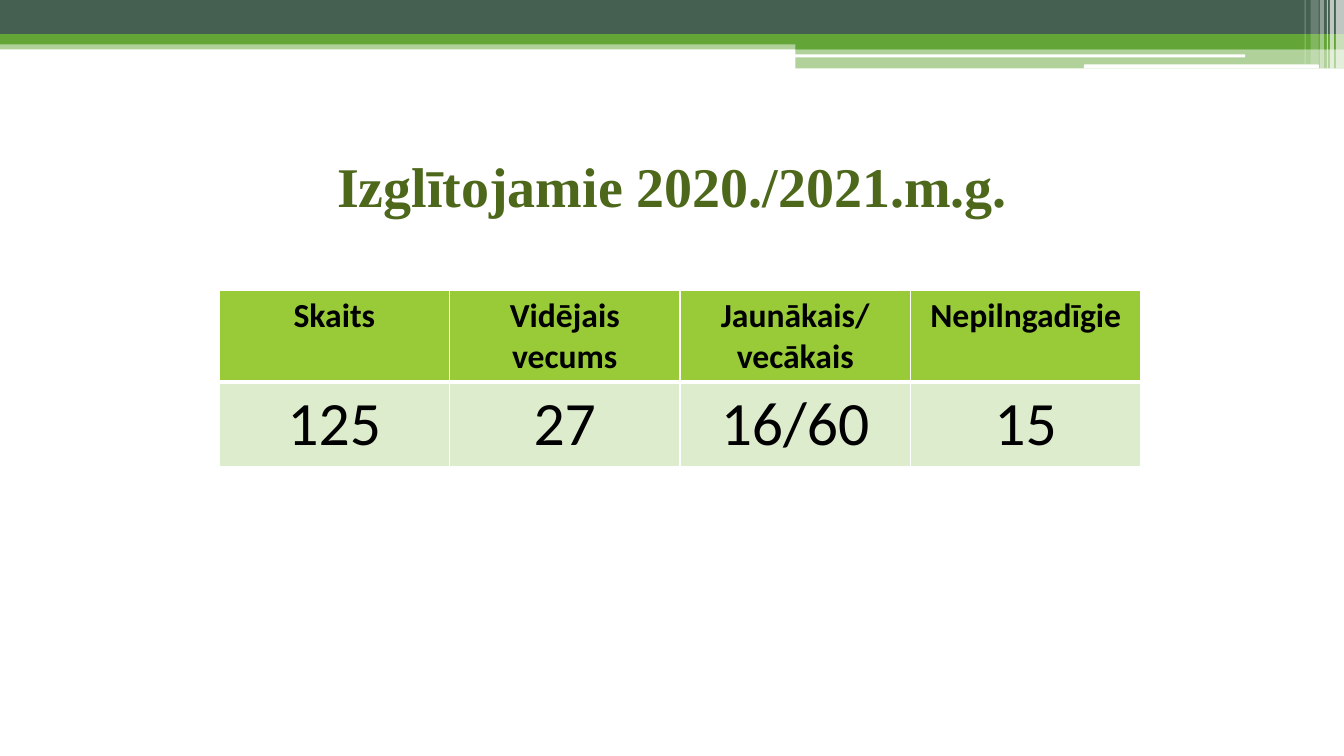
from lxml import etree
from pptx import Presentation
from pptx.dml.color import RGBColor
from pptx.enum.shapes import MSO_SHAPE
from pptx.enum.text import MSO_ANCHOR, PP_ALIGN
from pptx.oxml.ns import qn
from pptx.util import Inches, Pt

RECT, ROUND = MSO_SHAPE.RECTANGLE, MSO_SHAPE.ROUNDED_RECTANGLE
MIDDLE, CENTER = MSO_ANCHOR.MIDDLE, PP_ALIGN.CENTER

SLATE = RGBColor(0x45, 0x5F, 0x51)
GREEN = RGBColor(0x63, 0xA5, 0x37)
OLIVE = RGBColor(0x4D, 0x67, 0x1B)
LIME = RGBColor(0x99, 0xCB, 0x38)
PALE = RGBColor(0xDE, 0xEC, 0xCE)
WHITE = RGBColor(0xFF, 0xFF, 0xFF)
BLACK = RGBColor(0, 0, 0)

W, H = Inches(13.33), Inches(7.5)

BARS = [
    (RECT, 0, 58.8, 100, 13.2, GREEN, 50),
    (RECT, 0, 0, 100, 50, SLATE, 100),
    (RECT, 0, 50, 100, 14.7, GREEN, 100),
    (RECT, 59.19, 57.4, 40.81, 14.7, GREEN, 100),
    (RECT, 59.19, 70.6, 40.81, 29.4, GREEN, 50),
    (ROUND, 59.11, 79.4, 33.53, 4.4, WHITE, 100),
    (ROUND, 80.65, 94.1, 17.48, 5.9, WHITE, 100),
    (RECT, 99.4, 0, 0.6, 100, WHITE, 65),
    (RECT, 98.95, 0, 0.3, 100, WHITE, 65),
    (RECT, 98.72, 0, 0.08, 100, WHITE, 60),
    (RECT, 98.2, 0, 0.3, 100, WHITE, 40),
    (RECT, 97.52, 0, 0.6, 94.1, WHITE, 20),
    (RECT, 97.07, 0, 0.08, 94.1, WHITE, 30),
]

TITLE_FONT = {"name": "Times New Roman", "size": Pt(40), "bold": True}
HEAD_FONT = {"name": "Calibri", "size": Pt(24), "bold": True}
VALUE_FONT = {"name": "Calibri", "size": Pt(44), "bold": False}

ROWS = [
    (["Skaits", "Vidējais vecums", "Jaunākais/\nvecākais", "Nepilngadīgie"],
     HEAD_FONT, LIME, 0.52, {"L": 1, "R": 1, "T": 1, "B": 3}),
    (["125", "27", "16/60", "15"],
     VALUE_FONT, PALE, 0.48, {"L": 1, "R": 1, "T": 3, "B": 1}),
]


def share_box(x, y, w, h):
    return int(W * x), int(H * y), int(W * w), int(H * h)


def write(tf, text, font, color):
    tf.text = text
    for p in tf.paragraphs:
        p.alignment = CENTER
        for r in p.runs:
            for key, value in font.items():
                setattr(r.font, key, value)
            r.font.color.rgb = color


def set_borders(cell, widths):
    tcPr = cell._tc.get_or_add_tcPr()
    for side, points in widths.items():
        ln = etree.SubElement(tcPr, qn(f"a:ln{side}"), w=str(Pt(points)))
        fill = etree.SubElement(ln, qn("a:solidFill"))
        etree.SubElement(fill, qn("a:srgbClr"), val=str(WHITE))


def add_banner(s, box):
    left, top, width, height = box
    for kind, x, y, w, h, color, opacity in BARS:
        sp = s.shapes.add_shape(
            kind, int(left + width * x / 100), int(top + height * y / 100),
            int(width * w / 100), int(height * h / 100))
        sp.shadow.inherit = False
        sp.line.fill.background()
        sp.fill.solid()
        sp.fill.fore_color.rgb = color
        if opacity < 100:
            clr = sp._element.spPr.find(f".//{qn('a:srgbClr')}")
            etree.SubElement(clr, qn("a:alpha"), val=str(opacity * 1000))


def add_title(s, box):
    tf = s.shapes.add_textbox(*box).text_frame
    tf.word_wrap = True
    tf.vertical_anchor = MIDDLE
    write(tf, "Izglītojamie 2020./2021.m.g.", TITLE_FONT, OLIVE)


def add_learner_table(s, box):
    columns = len(ROWS[0][0])
    table = s.shapes.add_table(len(ROWS), columns, *box).table
    for column in table.columns:
        column.width = box[2] // columns
    for i, (texts, font, color, share, borders) in enumerate(ROWS):
        table.rows[i].height = int(box[3] * share)
        for j, text in enumerate(texts):
            cell = table.cell(i, j)
            set_borders(cell, borders)
            cell.fill.solid()
            cell.fill.fore_color.rgb = color
            write(cell.text_frame, text, font, BLACK)


def main():
    prs = Presentation()
    prs.slide_width, prs.slide_height = W, H
    s = prs.slides.add_slide(prs.slide_layouts[6])
    add_banner(s, (0, 0, W, Inches(0.68)))
    add_title(s, share_box(0.05, 1 / 6, 0.9, 0.156))
    add_learner_table(s, share_box(0.163, 0.384, 0.686, 0.233))
    prs.save("out.pptx")


if __name__ == "__main__":
    main()
